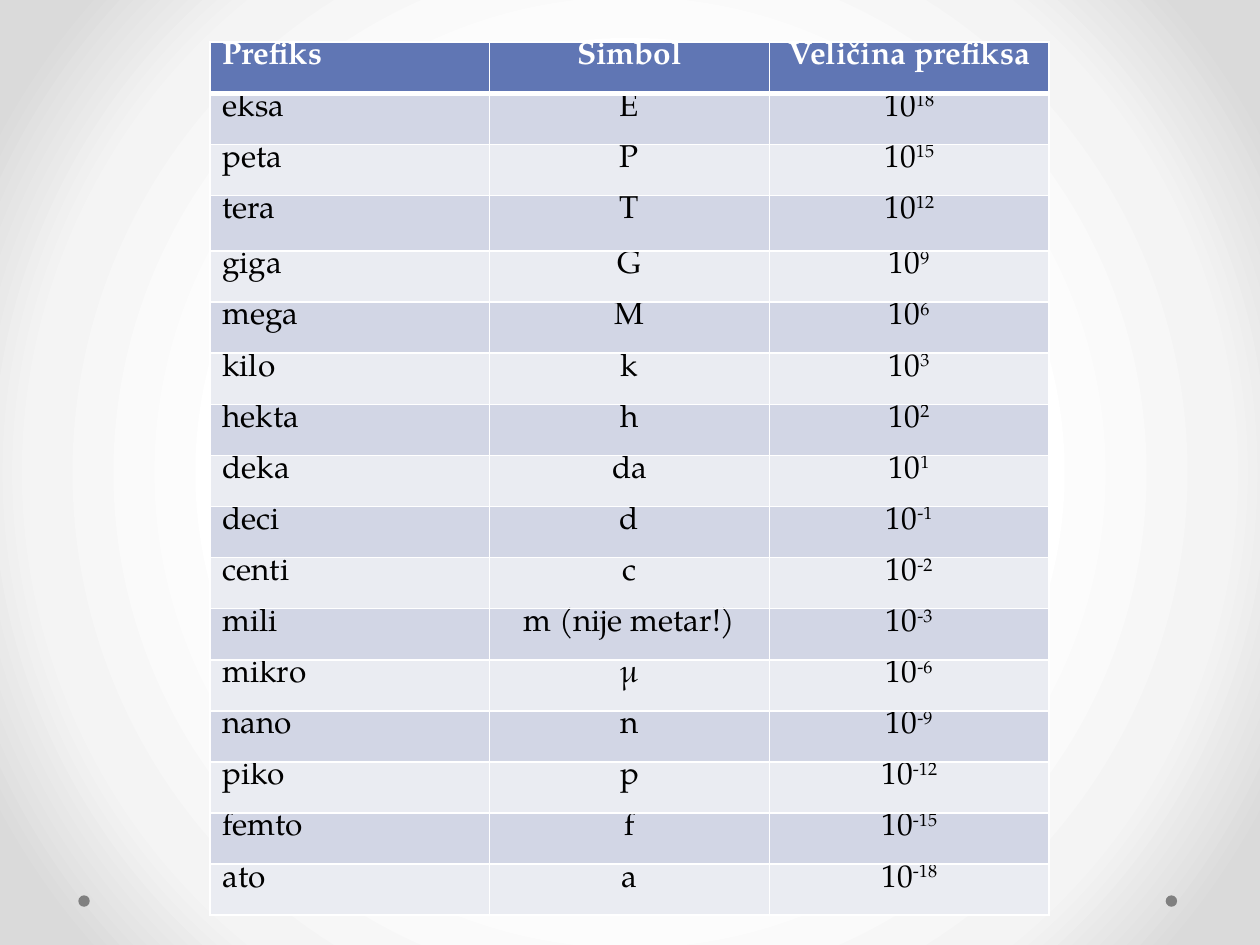
from typing import NamedTuple

import lxml.etree
import pptx
import pptx.dml.color
import pptx.enum.shapes
import pptx.enum.text
import pptx.oxml
import pptx.oxml.ns
import pptx.util
from pptx.util import Cm, Pt

FONT = "TeX Gyre Pagella"
WHITE, BLACK, GREY = "FFFFFF", "000000", "808080"
HEADER_FILL = "6076B4"
BAND_FILLS = ("D2D6E5", "EAECF2")
HEADINGS = ("Prefiks", "Simbol", "Veličina prefiksa")
ROW_HEIGHT, TALL_ROW_HEIGHT = Cm(1.03), Cm(1.12)
COLUMN_WIDTH = Cm(5.64)


class Prefix(NamedTuple):
    name: str
    symbol: str
    exponent: int


PREFIXES = [
    Prefix("eksa", "E", 18),
    Prefix("peta", "P", 15),
    Prefix("tera", "T", 12),
    Prefix("giga", "G", 9),
    Prefix("mega", "M", 6),
    Prefix("kilo", "k", 3),
    Prefix("hekta", "h", 2),
    Prefix("deka", "da", 1),
    Prefix("deci", "d", -1),
    Prefix("centi", "c", -2),
    Prefix("mili", "m (nije metar!)", -3),
    Prefix("mikro", "μ", -6),
    Prefix("nano", "n", -9),
    Prefix("piko", "p", -12),
    Prefix("femto", "f", -15),
    Prefix("ato", "a", -18),
]


def color(value: str) -> pptx.dml.color.RGBColor:
    return pptx.dml.color.RGBColor.from_string(value)


def set_background(slide) -> None:
    """Give the slide a circular gradient, white in the middle."""
    stops = "".join(
        f'<a:gs pos="{position * 1000}"><a:srgbClr val="{value}"/></a:gs>'
        for position, value in ((50, WHITE), (76, "F4F4F4"), (92, "DADADA"))
    )
    background = pptx.oxml.parse_xml(
        f'<p:bg {pptx.oxml.ns.nsdecls("p", "a")}><p:bgPr><a:gradFill rotWithShape="1">'
        f'<a:gsLst>{stops}</a:gsLst><a:path path="circle">'
        '<a:fillToRect l="50000" t="50000" r="50000" b="50000"/></a:path>'
        "</a:gradFill><a:effectLst/></p:bgPr></p:bg>"
    )
    slide.element.cSld.insert(0, background)


def add_dot(slide, left: int) -> None:
    size = Cm(0.23)
    dot = slide.shapes.add_shape(
        pptx.enum.shapes.MSO_SHAPE.OVAL, left, Cm(18.05), size, size
    )
    dot.shadow.inherit = False
    dot.fill.solid()
    dot.fill.fore_color.rgb = color(GREY)
    dot.line.fill.background()


def set_borders(cell, top: float, bottom: float) -> None:
    properties = cell._tc.get_or_add_tcPr()
    for side, width in (("L", 1), ("R", 1), ("T", top), ("B", bottom)):
        line = lxml.etree.SubElement(
            properties, pptx.oxml.ns.qn(f"a:ln{side}"), w=str(Pt(width))
        )
        fill = lxml.etree.SubElement(line, pptx.oxml.ns.qn("a:solidFill"))
        lxml.etree.SubElement(fill, pptx.oxml.ns.qn("a:srgbClr"), val=WHITE)


def write_cell(cell, text: str, row: int, column: int, exponent: str = "") -> None:
    is_header = row == 0
    set_borders(cell, top=3 if row == 1 else 1, bottom=3 if is_header else 1)
    cell.fill.solid()
    cell.fill.fore_color.rgb = color(
        HEADER_FILL if is_header else BAND_FILLS[(row - 1) % 2]
    )
    cell.margin_top = cell.margin_bottom = 0

    paragraph = cell.text_frame.paragraphs[0]
    paragraph.text = text
    if column > 0:
        paragraph.alignment = pptx.enum.text.PP_ALIGN.CENTER
    if exponent:
        superscript = paragraph.add_run()
        superscript.text = exponent
        superscript.font._element.set("baseline", "30000")
    for run in paragraph.runs:
        run.font.name = FONT
        run.font.size = Pt(18)
        run.font.bold = is_header
        run.font.color.rgb = color(WHITE if is_header else BLACK)


def add_prefix_table(slide) -> None:
    row_count = len(PREFIXES) + 1
    table = slide.shapes.add_table(
        row_count, len(HEADINGS), Cm(4.23), Cm(0.85),
        COLUMN_WIDTH * len(HEADINGS), ROW_HEIGHT * row_count,
    ).table
    for column in table.columns:
        column.width = COLUMN_WIDTH
    for row in table.rows:
        row.height = ROW_HEIGHT
    table.rows[3].height = TALL_ROW_HEIGHT

    for column, heading in enumerate(HEADINGS):
        write_cell(table.cell(0, column), heading, 0, column)
    for row, prefix in enumerate(PREFIXES, start=1):
        write_cell(table.cell(row, 0), prefix.name, row, 0)
        write_cell(table.cell(row, 1), prefix.symbol, row, 1)
        write_cell(table.cell(row, 2), "10", row, 2, str(prefix.exponent))


def main() -> None:
    presentation = pptx.Presentation()
    presentation.slide_width, presentation.slide_height = Cm(25.4), Cm(19.05)
    slide = presentation.slides.add_slide(presentation.slide_layouts[6])

    # Background and corner dots
    set_background(slide)
    for left in (Cm(23.5), Cm(1.58)):
        add_dot(slide, left)

    # Table of unit prefixes
    add_prefix_table(slide)
    presentation.save("out.pptx")


if __name__ == "__main__":
    main()
